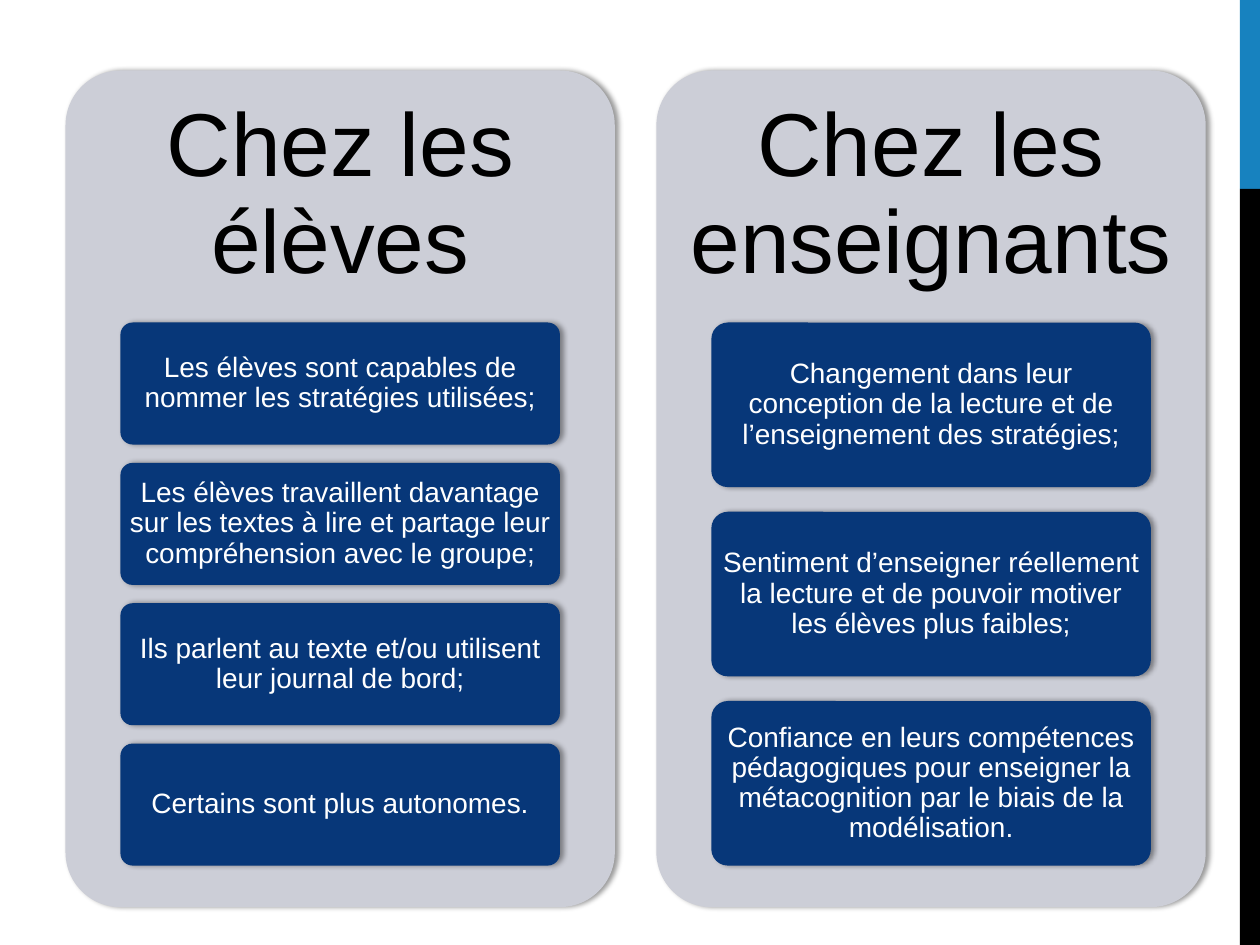
from lxml import etree
from pptx import Presentation
from pptx.dml.color import RGBColor
from pptx.enum.shapes import MSO_SHAPE
from pptx.enum.text import MSO_ANCHOR, PP_ALIGN
from pptx.util import Inches, Pt

SHADOW = (
    '<a:effectLst xmlns:a="http://schemas.openxmlformats.org/drawingml/2006/main">'
    '<a:outerShdw blurRad="39370" dist="22860" dir="0" rotWithShape="0">'
    '<a:srgbClr val="000000"><a:alpha val="40000"/></a:srgbClr>'
    '</a:outerShdw></a:effectLst>'
)


def add_block(kind, x, y, w, h, fill, shadow=False):
    sp = s.shapes.add_shape(kind, Inches(x), Inches(y), Inches(w), Inches(h))
    sp.fill.solid()
    sp.fill.fore_color.rgb = RGBColor.from_string(fill)
    sp.line.fill.background()
    if shadow:
        sp.adjustments[0] = 0.1
        sp._element.spPr.append(etree.fromstring(SHADOW))
    else:
        sp.shadow.inherit = False
    return sp


def write(sp, text, size, color, inset_x, inset_y):
    tf = sp.text_frame
    tf.word_wrap = True
    tf.vertical_anchor = MSO_ANCHOR.MIDDLE
    tf.margin_left = tf.margin_right = Inches(inset_x)
    tf.margin_top = tf.margin_bottom = Inches(inset_y)
    p = tf.paragraphs[0]
    p.alignment = PP_ALIGN.CENTER
    p.line_spacing = 0.9
    r = p.add_run()
    r.text = text
    r.font.name = "Arial"
    r.font.size = Pt(size)
    r.font.color.rgb = RGBColor.from_string(color)


prs = Presentation()
prs.slide_width, prs.slide_height = Inches(10), Inches(7.5)
s = prs.slides.add_slide(prs.slide_layouts[6])

# Side bar
add_block(MSO_SHAPE.RECTANGLE, 9.84, 0, 0.16, 1.5, "1782BF")
add_block(MSO_SHAPE.RECTANGLE, 9.84, 1.5, 0.16, 6, "000000")

# Two panels, each with a heading and a stack of boxes
columns = [
    ("Chez les élèves", [
        "Les élèves sont capables de nommer les stratégies utilisées;",
        "Les élèves travaillent davantage sur les textes à lire et partage leur "
        "compréhension avec le groupe;",
        "Ils parlent au texte et/ou utilisent leur journal de bord;",
        "Certains sont plus autonomes.",
    ]),
    ("Chez les enseignants", [
        "Changement dans leur conception de la lecture et de l’enseignement "
        "des stratégies;",
        "Sentiment d’enseigner réellement la lecture et de pouvoir motiver "
        "les élèves plus faibles;",
        "Confiance en leurs compétences pédagogiques pour enseigner la "
        "métacognition par le biais de la modélisation.",
    ]),
]
panel_top, panel_w, panel_h = 0.56, 4.36, 6.64
stack_top, stack_h = 2.56, 4.31
box_w = 0.8 * panel_w
gap_ratio = 0.15  # gap between boxes relative to box height

for col, (heading, items) in enumerate(columns):
    x = 0.52 + col * 4.69
    add_block(MSO_SHAPE.ROUNDED_RECTANGLE, x, panel_top, panel_w, panel_h,
              "CCCED7", shadow=True)
    title = s.shapes.add_textbox(Inches(x), Inches(panel_top),
                                 Inches(panel_w), Inches(1.99))
    write(title, heading, 51, "000000", 0.21, 0.21)

    # Boxes share the stack height evenly
    box_h = stack_h / (len(items) + gap_ratio * (len(items) - 1))
    for i, text in enumerate(items):
        y = stack_top + i * box_h * (1 + gap_ratio)
        box = add_block(MSO_SHAPE.ROUNDED_RECTANGLE, x + 0.1 * panel_w, y,
                        box_w, box_h, "073779", shadow=True)
        # The rounded corners already hold the text in a little
        write(box, text, 16, "FFFFFF", 0.03, 0.03)

prs.save("out.pptx")
